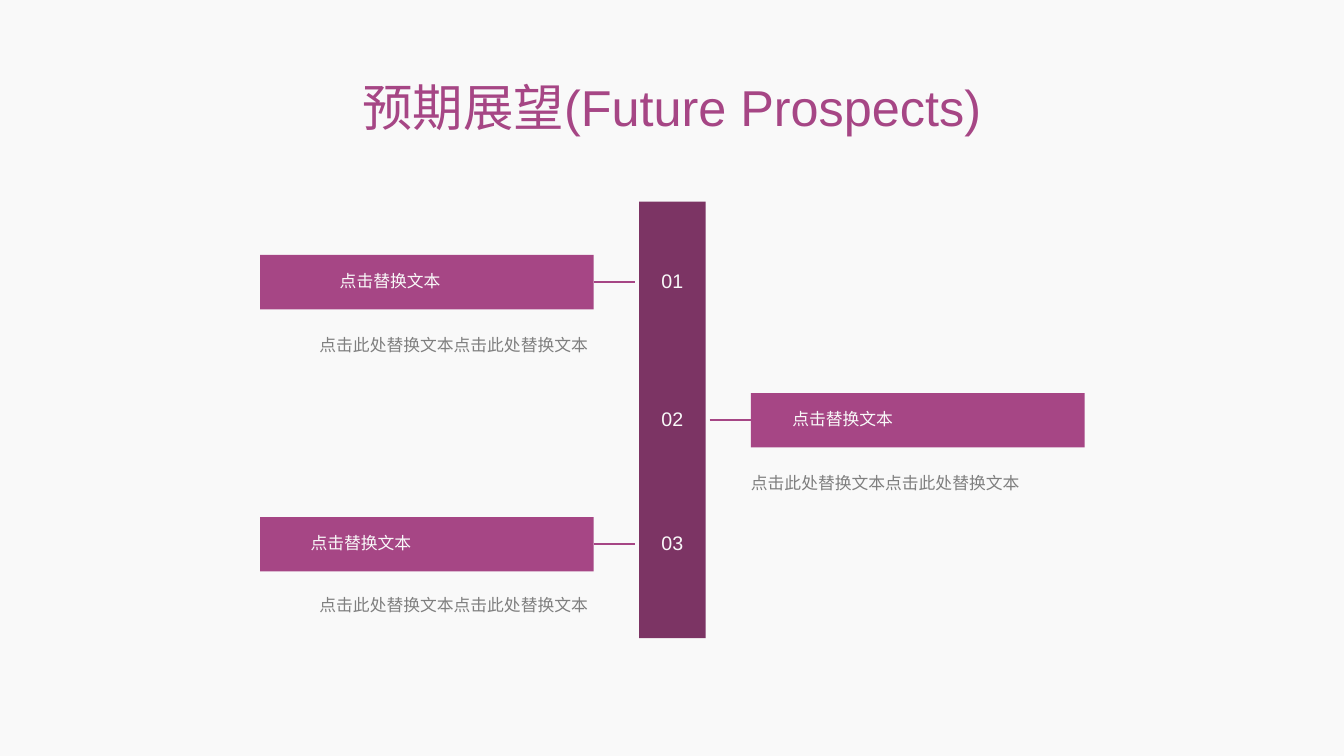
from lxml import etree
from pptx import Presentation
from pptx.dml.color import RGBColor
from pptx.enum import shapes, text
from pptx.oxml import ns
from pptx.util import Pt

PAPER = RGBColor(0xF9, 0xF9, 0xF9)
MAGENTA = RGBColor(0xA6, 0x46, 0x85)
PLUM = RGBColor(0x7C, 0x34, 0x64)
GREY = RGBColor(0x7F, 0x7F, 0x7F)

SPINE = (456.5, 144, 47.5, 311.8)
BAR_WIDTH, BAR_HEIGHT = 238.3, 38.9
LINK_LENGTH, LINK_GAP = 29.5, 2.9

# number, side, centre height, heading indent and width, detail indent and drop
MILESTONES = [
    ("01", "left", 201.6, 56.9, 125.3, 42.4, 34.6),
    ("02", "right", 300.2, 29.5, 178.6, 0, 34.6),
    ("03", "left", 388.8, 36, 167, 42.4, 33.1),
]


def add_text(page, left, top, width, height, words, *, size=12, color=PAPER,
             align=text.PP_ALIGN.LEFT, anchor=text.MSO_ANCHOR.MIDDLE,
             line_spacing=0.9, before=10):
    box = page.shapes.add_textbox(Pt(left), Pt(top), Pt(width), Pt(height))
    frame = box.text_frame
    frame.word_wrap = True
    frame.vertical_anchor = anchor
    frame.margin_left = frame.margin_right = 0
    frame.margin_top = frame.margin_bottom = 0
    para = frame.paragraphs[0]
    para.alignment = align
    para.line_spacing = line_spacing
    para.space_before = Pt(before)
    span = para.add_run()
    span.text = words
    span.font.name = "Arial"
    span.font.size = Pt(size)
    span.font.color.rgb = color


def add_block(page, left, top, width, height, color):
    block = page.shapes.add_shape(shapes.MSO_SHAPE.RECTANGLE,
                                  Pt(left), Pt(top), Pt(width), Pt(height))
    block.shadow.inherit = False
    block.fill.solid()
    block.fill.fore_color.rgb = color
    block.line.fill.background()


def add_link(page, start, end, height):
    link = page.shapes.add_connector(shapes.MSO_CONNECTOR.STRAIGHT,
                                     Pt(start), Pt(height), Pt(end), Pt(height))
    link.line.color.rgb = MAGENTA
    link.line.width = Pt(1.5)
    etree.SubElement(link.element.spPr, ns.qn("a:effectLst"))


def add_title(page, left, top, width, height):
    add_text(page, left, top, width, height, "预期展望(Future Prospects)",
             size=36, color=MAGENTA, align=text.PP_ALIGN.CENTER,
             line_spacing=Pt(48), before=0)


def add_milestone(page, spine, number, side, centre, heading_indent,
                  heading_width, detail_indent, detail_drop):
    """Number on the spine, linked to a bar with its detail beneath."""
    spine_left, _, spine_width, _ = spine
    if side == "left":
        link_start = spine_left - LINK_GAP - LINK_LENGTH
        bar_left = link_start - BAR_WIDTH
    else:
        link_start = spine_left + spine_width + LINK_GAP
        bar_left = link_start + LINK_LENGTH
    add_block(page, bar_left, centre - BAR_HEIGHT / 2, BAR_WIDTH, BAR_HEIGHT, MAGENTA)
    add_link(page, link_start, link_start + LINK_LENGTH, centre)
    add_text(page, spine_left, centre - 12, spine_width, 24, number,
             size=14, align=text.PP_ALIGN.CENTER)
    add_text(page, bar_left + heading_indent, centre - 15, heading_width, 30,
             "点击替换文本")
    add_text(page, bar_left + detail_indent, centre + detail_drop, 196.6, 51.8,
             "点击此处替换文本点击此处替换文本", color=GREY,
             anchor=text.MSO_ANCHOR.TOP, line_spacing=Pt(17))


def add_timeline(page, spine):
    add_block(page, *spine, PLUM)
    for milestone in MILESTONES:
        add_milestone(page, spine, *milestone)


def main():
    deck = Presentation()
    deck.slide_width, deck.slide_height = Pt(960), Pt(540)
    page = deck.slides.add_slide(deck.slide_layouts[6])
    page.background.fill.solid()
    page.background.fill.fore_color.rgb = PAPER
    add_title(page, 120, 52.6, 720, 42.5)
    add_timeline(page, SPINE)
    deck.save("out.pptx")


if __name__ == "__main__":
    main()
